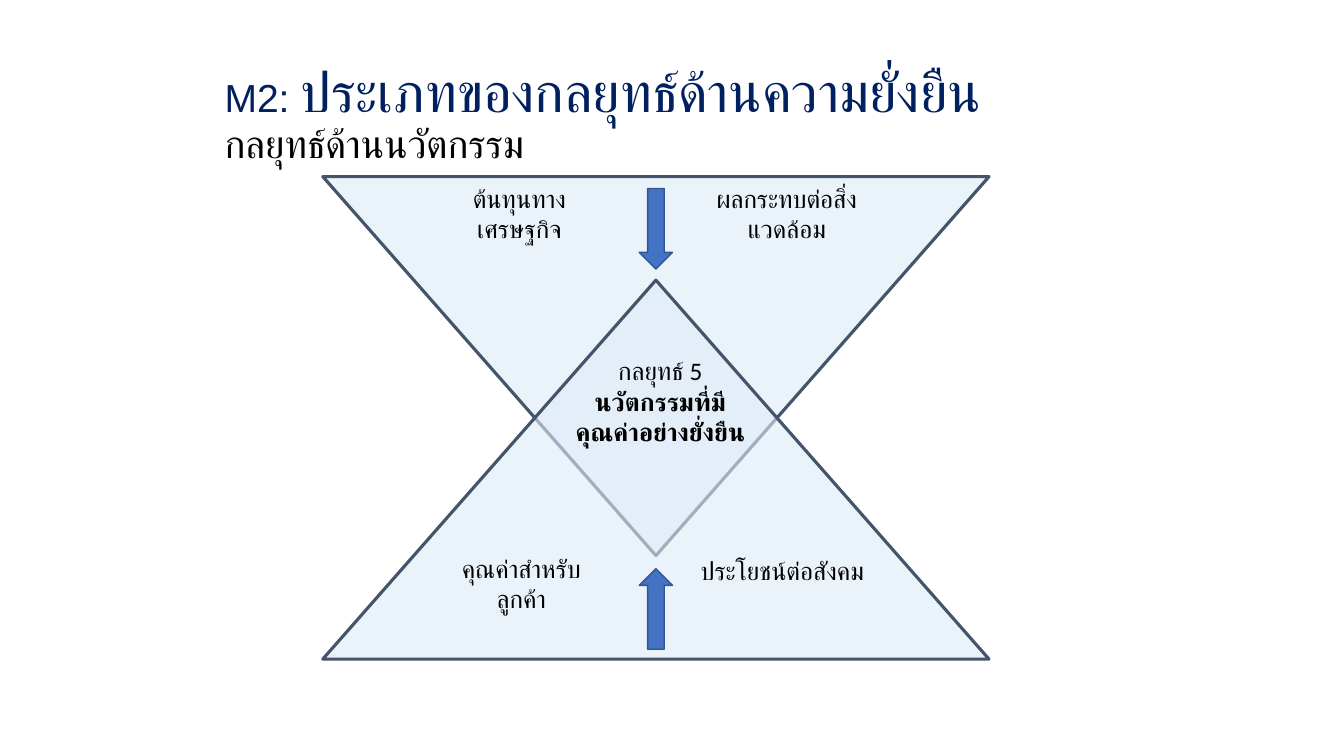
"""Build a slide showing the innovation strategy as two overlapping triangles."""
from lxml import etree
from pptx import Presentation
from pptx.dml.color import RGBColor
from pptx.enum.shapes import MSO_SHAPE
from pptx.enum.text import MSO_ANCHOR, PP_ALIGN
from pptx.oxml.ns import qn
from pptx.util import Cm, Pt

TRIANGLE, ARROW = MSO_SHAPE.ISOSCELES_TRIANGLE, MSO_SHAPE.DOWN_ARROW
LEFT, CENTER = PP_ALIGN.LEFT, PP_ALIGN.CENTER
TOP, MIDDLE = MSO_ANCHOR.TOP, MSO_ANCHOR.MIDDLE

THEME = {
    "panel": "DEEBF7", "outline": "44546A", "arrow": "4472C4", "arrow_line": "325491",
    "title": "002060", "text": "000000",
    "title_font": "Arial", "body_font": "Calibri",
    "title_size": 39.6, "subtitle_size": 27.9, "body_size": 18,
}

TITLE = [
    [("M2: ", {"size": THEME["subtitle_size"], "color": THEME["title"], "font": THEME["title_font"]}),
     ("ประเภทของกลยุทธ์ด้านความยั่งยืน",
      {"size": THEME["title_size"], "color": THEME["title"], "font": THEME["title_font"]}),
     ("\n", {}),
     ("กลยุทธ์ด้านนวัตกรรม", {"size": THEME["subtitle_size"]})],
]
TITLE_BOX = (5.41, 1.68, 27.53, 2.46)
LABELS = [
    ([[("ต้นทุนทางเศรษฐกิจ", {})]], (11.02, 4.5, 4.14, 2.26)),
    ([[("คุณค่าสำหรับลูกค้า", {})]], (11.07, 13.82, 4.14, 2.26)),
    ([[("ประโยชน์ต่อสังคม", {})]], (17.25, 13.87, 4.93, 2.26)),
    ([[("ผลกระทบต่อสิ่งแวดล้อม", {})]], (17.48, 4.5, 4.7, 2.26)),
    ([[("กลยุทธ์ 5", {})], [("นวัตกรรมที่มีคุณค่าอย่างยั่งยืน", {"bold": True})]],
     (14.1, 8.84, 5.08, 3.51)),
]
CENTER_X = 16.53
TRIANGLE_SIZE, TRIANGLE_TOPS = (16.79, 9.55), {180: 4.45, 0: 7.06}
ARROW_SIZE, ARROW_TOPS = (0.84, 2.03), {180: 14.33, 0: 4.75}


def add_text(slide, paragraphs, box, align=CENTER, anchor=TOP, spacing=1.0):
    frame = slide.shapes.add_textbox(*map(Cm, box)).text_frame
    frame.word_wrap = True
    frame.vertical_anchor = anchor
    for index, runs in enumerate(paragraphs):
        paragraph = frame.add_paragraph() if index else frame.paragraphs[0]
        paragraph.alignment = align
        paragraph.line_spacing = spacing
        for text, style in runs:
            if text == "\n":
                paragraph.add_line_break()
                continue
            run = paragraph.add_run()
            run.text = text
            run.font.name = style.get("font", THEME["body_font"])
            run.font.size = Pt(style.get("size", THEME["body_size"]))
            run.font.bold = style.get("bold", False)
            run.font.color.rgb = RGBColor.from_string(style.get("color", THEME["text"]))


def add_centered(slide, kind, top, size, rotation, fill, line, weight, opacity=100):
    width, height = size
    shape = slide.shapes.add_shape(kind, Cm(CENTER_X - width / 2), Cm(top), Cm(width), Cm(height))
    shape.rotation = rotation
    shape.shadow.inherit = False
    shape.fill.solid()
    shape.fill.fore_color.rgb = RGBColor.from_string(fill)
    shape.line.color.rgb = RGBColor.from_string(line)
    shape.line.width = Pt(weight)
    if opacity < 100:
        color = shape.fill._xPr.find(qn("a:solidFill"))[0]
        etree.SubElement(color, qn("a:alpha")).set("val", str(opacity * 1000))


def main():
    presentation = Presentation()
    presentation.slide_width, presentation.slide_height = Cm(33.87), Cm(19.05)
    slide = presentation.slides.add_slide(presentation.slide_layouts[6])
    for rotation, top in TRIANGLE_TOPS.items():
        add_centered(slide, TRIANGLE, top, TRIANGLE_SIZE, rotation,
                     THEME["panel"], THEME["outline"], 2.25, opacity=60)
    for paragraphs, box in LABELS:
        add_text(slide, paragraphs, box)
    for rotation, top in ARROW_TOPS.items():
        add_centered(slide, ARROW, top, ARROW_SIZE, rotation,
                     THEME["arrow"], THEME["arrow_line"], 1)
    add_text(slide, TITLE, TITLE_BOX, align=LEFT, anchor=MIDDLE, spacing=0.9)
    presentation.save("out.pptx")


if __name__ == "__main__":
    main()
